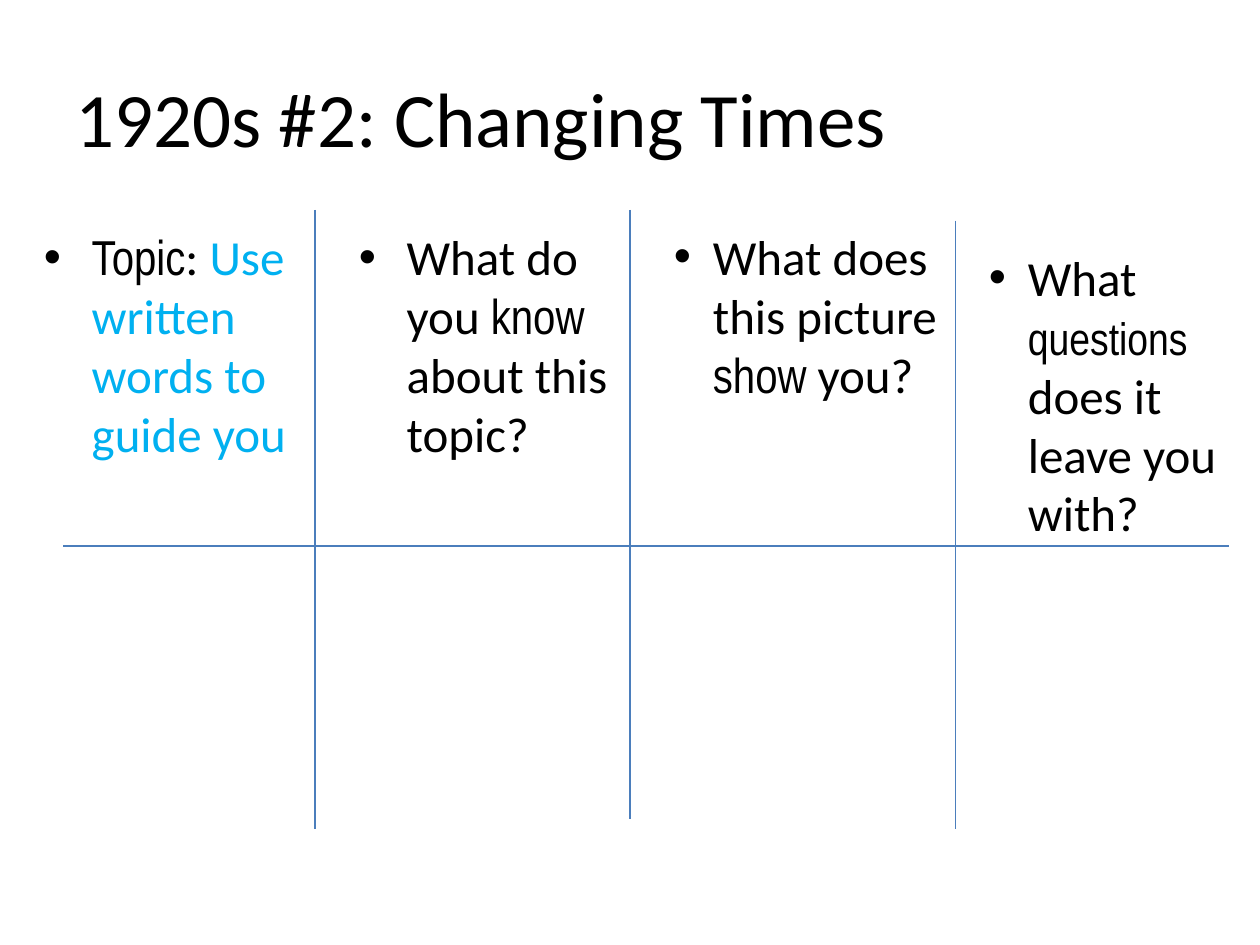
from lxml.etree import SubElement
from pptx import Presentation
from pptx.dml.color import RGBColor
from pptx.enum.shapes import MSO_CONNECTOR
from pptx.enum.text import MSO_ANCHOR
from pptx.oxml.ns import qn
from pptx.util import Inches, Pt

# Grid of 120 columns by 90 rows, twelve to the inch
WIDE, HIGH = 120, 90
BLACK, SKY, BLUE = "000000", "00B0F0", "4B7EBC"
SANS, SLIM = "Calibri", "Arial Narrow"


def grid(*cells):
    return [Inches(cell / 12) for cell in cells]


def tint(code):
    return RGBColor.from_string(code)


def style(run, size, font=SANS, color=BLACK):
    run.font.size = Pt(size)
    run.font.name = font
    run.font.color.rgb = tint(color)


def add_box(slide, area):
    frame = slide.shapes.add_textbox(*grid(*area)).text_frame
    frame.word_wrap = True
    return frame


def add_title(slide, text, area):
    frame = add_box(slide, area)
    frame.vertical_anchor = MSO_ANCHOR.MIDDLE
    frame.text = text
    style(frame.paragraphs[0].runs[0], 44)


def add_prompt(slide, area, indent, parts):
    para = add_box(slide, area).paragraphs[0]
    # Bullet with a hanging indent
    props = para._p.get_or_add_pPr()
    props.set("marL", str(Inches(indent)))
    props.set("indent", str(-Inches(indent)))
    SubElement(props, qn("a:buFont")).set("typeface", "Arial")
    SubElement(props, qn("a:buChar")).set("char", "•")
    for text, size, font, color in parts:
        run = para.add_run()
        run.text = text
        style(run, size, font, color)


def add_rule(slide, ends):
    rule = slide.shapes.add_connector(MSO_CONNECTOR.STRAIGHT, *grid(*ends))
    rule.line.color.rgb = tint(BLUE)
    rule.line.width = Pt(0.75)
    SubElement(rule._element.spPr, qn("a:effectLst"))


def plain(text, color=BLACK):
    return text, 28, SANS, color


def key(text, size=28):
    return text, size, SLIM, BLACK


def main():
    deck = Presentation()
    deck.slide_width, deck.slide_height = grid(WIDE, HIGH)
    slide = deck.slides.add_slide(deck.slide_layouts[6])

    add_title(slide, "1920s #2: Changing Times", (6, 3.6, 108, 15))

    # Column prompts: area, indent, text parts
    prompts = [
        ((3, 21, 30, 59.4), 0.38,
         [key("Topic"), plain(": "),
          plain("Use written words to guide you", SKY)]),
        ((33, 21, 31, 59.4), 0.38,
         [plain("What do you "), key("know"), plain(" about this topic?")]),
        ((63, 21, 30, 18), 0.31,
         [plain("What does this picture "), key("show"), plain(" you?")]),
        ((93, 23, 25, 29.5), 0.31,
         [plain("What "), key("questions", 26),
          plain(" does it leave you with?")]),
    ]
    for area, indent, parts in prompts:
        add_prompt(slide, area, indent, parts)

    # Column rules, then the row rule
    for left, top, base in [(30, 20, 79), (60, 20, 78), (91, 21, 79)]:
        add_rule(slide, (left, top, left, base))
    add_rule(slide, (6, 52, 117, 52))

    deck.save("out.pptx")


if __name__ == "__main__":
    main()
